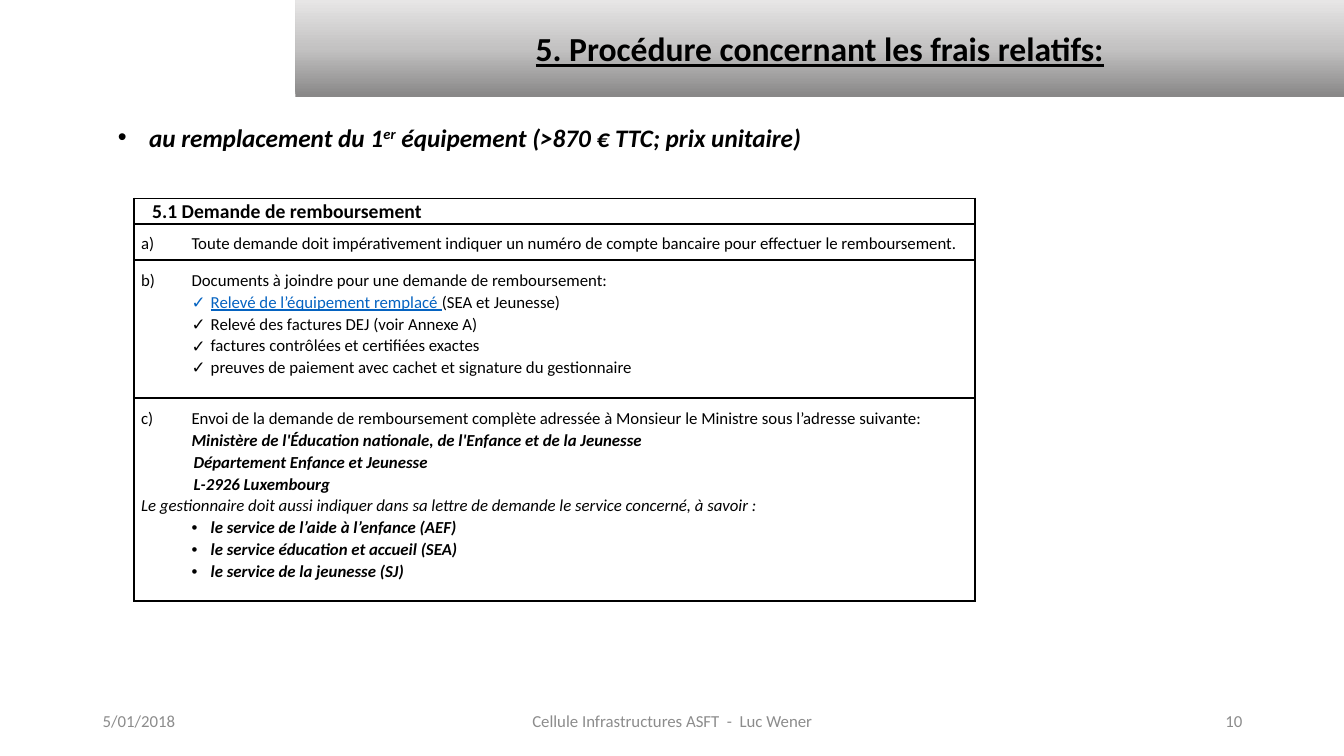
"""Build the slide on the refund procedure for replaced equipment."""
from copy import deepcopy
from lxml import etree
from pptx import Presentation
from pptx import oxml
from pptx.dml.color import RGBColor
from pptx.enum import text as t
from pptx.util import Inches, Pt

HUE = {"ink": "000000", "grey": "8C8C8C", "link": "0563C1"}
FADE = [(0.01, "898888"), (0.5, "C3C2C2"), (1, "E7E6E6")]
NS = 'xmlns:a="http://schemas.openxmlformats.org/drawingml/2006/main"'


def style(font, size, hue="ink", bold=False, slant=False):
    """Set the look of a font."""
    font.name, font.size = "Calibri", Pt(size)
    font.bold, font.italic = bold, slant
    font.color.rgb = RGBColor.from_string(HUE[hue])


def indent(para, left, mark="", tab=0):
    """Set the left margin, and a hanging bullet or a tab stop."""
    props = para._p.get_or_add_pPr()
    props.set("marL", str(Inches(left)))
    props.set("indent", "0")
    if mark:
        hang = 0.31 if left < 0.5 else 0.19
        props.set("indent", str(-Inches(hang)))
        etree.SubElement(props, oxml.ns.qn("a:buFont")).set("typeface", "Arial")
        etree.SubElement(props, oxml.ns.qn("a:buChar")).set("char", mark)
    if tab:
        props.append(oxml.parse_xml(
            f'<a:tabLst {NS}><a:tab pos="{Inches(tab)}" algn="l"/></a:tabLst>'))


prs = Presentation()
prs.slide_width, prs.slide_height = Inches(13.33), Inches(7.5)
slide = prs.slides.add_slide(prs.slide_layouts[5])

title = slide.shapes.title
title.left, title.top = Inches(2.93), Inches(0)
title.width, title.height = Inches(10.4), Inches(0.96)
title.fill.gradient()
title.fill.gradient_angle = 90
stops = title.fill._fill._gradFill.gsLst
stops.append(deepcopy(stops[0]))
for stop, (pos, hue) in zip(title.fill.gradient_stops, FADE):
    stop.position = pos
    stop.color.rgb = RGBColor.from_string(hue)
frame = title.text_frame
frame.text = "5. Procédure concernant les frais relatifs:"
frame.auto_size = t.MSO_AUTO_SIZE.NONE
frame.vertical_anchor = t.MSO_ANCHOR.MIDDLE
frame.margin_top = frame.margin_bottom = Inches(0.28)
para = frame.paragraphs[0]
para.alignment = t.PP_ALIGN.CENTER
style(para.runs[0].font, 24, bold=True)
para.runs[0].font.underline = True

lead = slide.shapes.add_textbox(Inches(1.07), Inches(1.16), Inches(8.87), Inches(0.4))
lead.text_frame.word_wrap = True
para = lead.text_frame.paragraphs[0]
indent(para, 0.31, "•")
for part in ["au remplacement du 1", "er", " équipement (>870 € TTC; prix unitaire)"]:
    run = para.add_run()
    run.text = part
    style(run.font, 18, bold=True, slant=True)
    if part == "er":
        run._r.get_or_add_rPr().set("baseline", "30000")

# Each line: text, left margin, bullet, tab stop, bold, italic
ROWS = [
    (0.25, [("5.1 Demande de remboursement", 0.11, "", 0, True, False)]),
    (0.36, [("a)\tToute demande doit impérativement indiquer un numéro de compte "
             "bancaire pour effectuer le remboursement.", 0, "", 0.2, False, False)]),
    (1.37, [("b)\tDocuments à joindre pour une demande de remboursement:",
             0, "", 0.33, False, False)]
     + [(line, 0.69, "✓", 0, False, False) for line in (
         "Relevé de l’équipement remplacé |(SEA et Jeunesse)",
         "Relevé des factures DEJ (voir Annexe A)",
         "factures contrôlées et certifiées exactes",
         "preuves de paiement avec cachet et signature du gestionnaire")]),
    (2.01, [("c)\tEnvoi de la demande de remboursement complète adressée à Monsieur "
             "le Ministre sous l’adresse suivante:", 0, "", 0.35, False, False),
            ("Ministère de l'Éducation nationale, de l'Enfance et de la Jeunesse",
             0.5, "", 0, True, True),
            ("Département Enfance et Jeunesse", 0.52, "", 0, True, True),
            ("L-2926 Luxembourg", 0.52, "", 0, True, True),
            ("Le gestionnaire doit aussi indiquer dans sa lettre de demande le "
             "service concerné, à savoir\u00a0:", 0, "", 0, False, True)]
     + [(line, 0.69, "•", 0, True, True) for line in (
         "le service de l’aide à l’enfance (AEF)",
         "le service éducation et accueil (SEA)",
         "le service de la jeunesse (SJ)")]),
]
table = slide.shapes.add_table(len(ROWS), 1, Inches(1.33), Inches(1.97),
                               Inches(8.34), Inches(3.99)).table
table.first_row = table.horz_banding = False
for num, (high, lines) in enumerate(ROWS):
    table.rows[num].height = Inches(high)
    cell = table.cell(num, 0)
    cell.margin_left = cell.margin_right = Inches(0.07)
    cell.margin_top = cell.margin_bottom = 0
    for side in "LRTB":
        cell._tc.get_or_add_tcPr().append(oxml.parse_xml(
            f'<a:ln{side} {NS} w="{Pt(1.5)}"><a:solidFill>'
            f'<a:srgbClr val="{HUE["ink"]}"/></a:solidFill></a:ln{side}>'))
    cell.fill.background()
    for spot, (line, left, mark, tab, bold, slant) in enumerate(lines):
        para = cell.text_frame.paragraphs[0] if spot == 0 else cell.text_frame.add_paragraph()
        indent(para, left, mark, tab)
        para.line_spacing = 1.5 if tab else 1.07
        parts = line.split("|")
        for part in parts:
            run = para.add_run()
            run.text = part
            linked = len(parts) > 1 and part == parts[0]
            style(run.font, 12 if num else 14, "link" if linked else "ink", bold, slant)
            run.font.underline = linked

FOOT = [
    (0.92, 3, "5/01/2018", t.PP_ALIGN.LEFT),
    (4.42, 4.5, "Cellule Infrastructures ASFT  -  Luc Wener", t.PP_ALIGN.CENTER),
    (9.42, 3, "10", t.PP_ALIGN.RIGHT),
]
for left, wide, words, side in FOOT:
    box = slide.shapes.add_textbox(Inches(left), Inches(6.95), Inches(wide), Inches(0.4))
    frame = box.text_frame
    frame.word_wrap = True
    frame.vertical_anchor = t.MSO_ANCHOR.MIDDLE
    frame.text = words
    frame.paragraphs[0].alignment = side
    style(frame.paragraphs[0].runs[0].font, 12, "grey")

prs.save("out.pptx")
